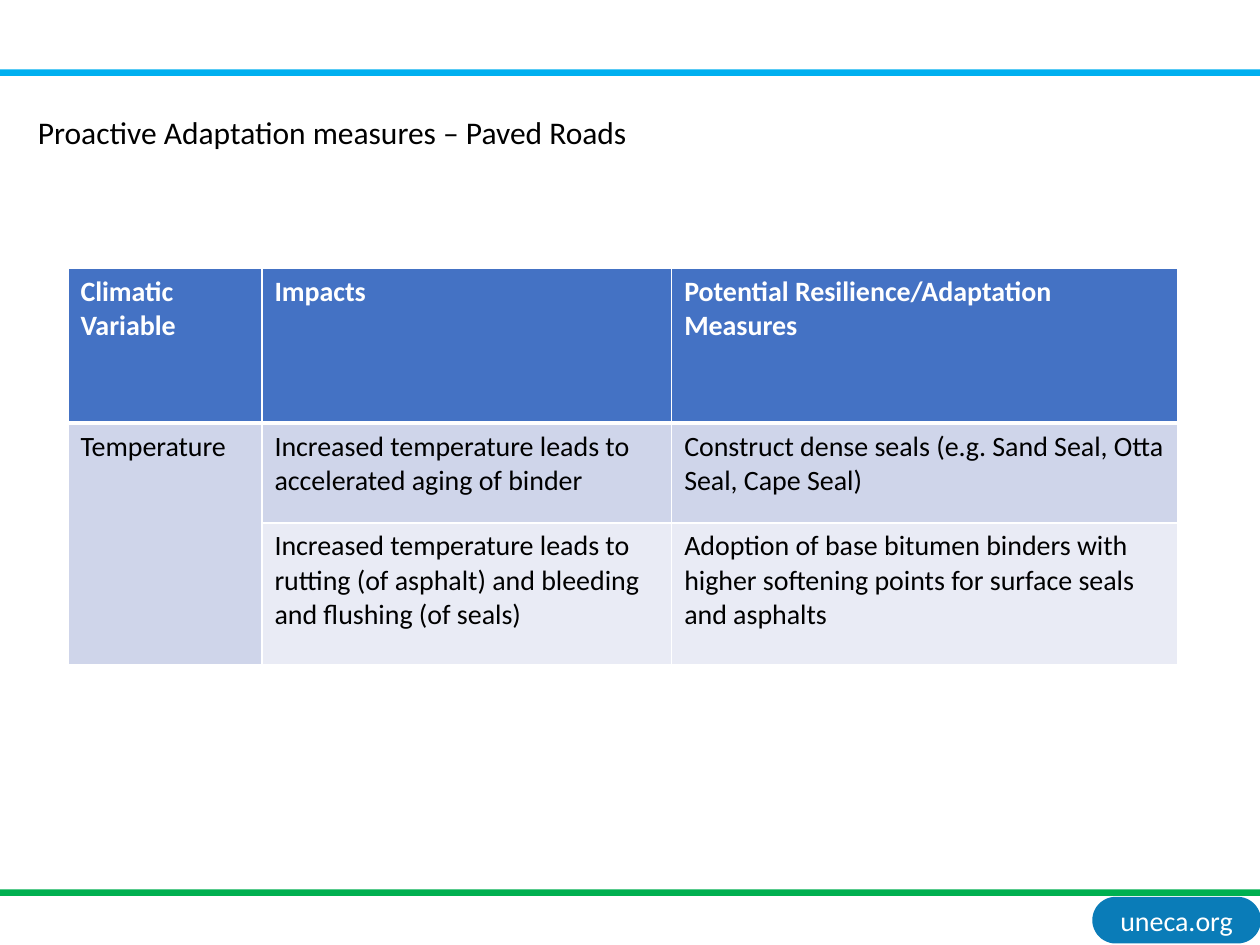
"""Build the slide on proactive adaptation measures for paved roads."""
import dataclasses

import lxml.etree
import pptx
import pptx.dml.color
import pptx.enum.shapes
import pptx.enum.text
import pptx.oxml.ns
import pptx.util

Cm = pptx.util.Cm
Pt = pptx.util.Pt
SHAPES = pptx.enum.shapes.MSO_SHAPE
ALIGN = pptx.enum.text.PP_ALIGN
ANCHOR = pptx.enum.text.MSO_ANCHOR

COLORS = {
    "black": "000000",
    "white": "FFFFFF",
    "sky": "00B0F0",
    "green": "00B050",
    "badge": "0A7CB8",
    "header": "4472C4",
    "band_dark": "CFD5EA",
    "band_light": "E9EBF5",
}
FONT = "Calibri"


@dataclasses.dataclass
class Box:
    left: float
    top: float
    width: float
    height: float

    def lengths(self) -> list:
        return [Cm(v) for v in (self.left, self.top, self.width, self.height)]


@dataclasses.dataclass
class Row:
    height: float
    fill: str
    texts: tuple


BARS = [(Box(0, 1.4, 25.4, 0.13), "sky"), (Box(0, 17.93, 25.4, 0.13), "green")]
BADGE = Box(22.02, 18.08, 3.4, 0.94)
TITLE = Box(0.51, 2.16, 12.9, 1.02)
TABLE_LEFT, TABLE_TOP = 1.37, 5.41
COLUMN_WIDTHS = [3.91, 8.26, 10.21]
ROWS = [
    Row(3.12, "header", ("Climatic Variable", "Impacts", "Potential Resilience/Adaptation Measures")),
    Row(2.01, "band_dark", (
        "Temperature",
        "Increased temperature leads to accelerated aging of binder",
        "Construct dense seals (e.g. Sand Seal, Otta Seal, Cape Seal)",
    )),
    Row(2.87, "band_light", (
        "",
        "Increased temperature leads to rutting (of asphalt) and bleeding and flushing (of seals)",
        "Adoption of base bitumen binders with higher softening points for surface seals and asphalts",
    )),
]


def rgb(name: str) -> pptx.dml.color.RGBColor:
    return pptx.dml.color.RGBColor.from_string(COLORS[name])


def add_run(p, text: str, size: float, color: str, bold: bool = False) -> None:
    r = p.add_run()
    r.text = text
    r.font.name = FONT
    r.font.size = Pt(size)
    r.font.bold = bold
    r.font.color.rgb = rgb(color)


def add_filled(slide, kind, box: Box, color: str):
    sp = slide.shapes.add_shape(kind, *box.lengths())
    sp.shadow.inherit = False
    sp.fill.solid()
    sp.fill.fore_color.rgb = rgb(color)
    sp.line.fill.background()
    return sp


def add_badge(slide) -> None:
    sp = add_filled(slide, SHAPES.ROUNDED_RECTANGLE, BADGE, "badge")
    sp.adjustments[0] = 0.5
    tf = sp.text_frame
    tf.margin_left = tf.margin_right = tf.margin_top = tf.margin_bottom = Cm(0.13)
    tf.vertical_anchor = ANCHOR.MIDDLE
    tf.word_wrap = False
    p = tf.paragraphs[0]
    p.alignment = ALIGN.CENTER
    add_run(p, "uneca.org", 16, "white")


def set_border(cell, side: str, width: float) -> None:
    qn = pptx.oxml.ns.qn
    ln = lxml.etree.SubElement(cell._tc.get_or_add_tcPr(), qn(f"a:ln{side}"), w=str(Pt(width)))
    fill = lxml.etree.SubElement(ln, qn("a:solidFill"))
    lxml.etree.SubElement(fill, qn("a:srgbClr"), val=COLORS["white"])


def add_measures_table(slide) -> None:
    box = Box(TABLE_LEFT, TABLE_TOP, sum(COLUMN_WIDTHS), sum(row.height for row in ROWS))
    table = slide.shapes.add_table(len(ROWS), len(COLUMN_WIDTHS), *box.lengths()).table
    for column, width in zip(table.columns, COLUMN_WIDTHS):
        column.width = Cm(width)
    table.cell(1, 0).merge(table.cell(2, 0))
    for i, row in enumerate(ROWS):
        table.rows[i].height = Cm(row.height)
        is_header = i == 0
        for j, text in enumerate(row.texts):
            cell = table.cell(i, j)
            widths = {"L": 1, "R": 1, "T": 3 if i == 1 else 1, "B": 3 if is_header else 1}
            for side, width in widths.items():
                set_border(cell, side, width)
            cell.fill.solid()
            cell.fill.fore_color.rgb = rgb(row.fill)
            if text:
                color = "white" if is_header else "black"
                add_run(cell.text_frame.paragraphs[0], text, 16, color, is_header)


def set_title(slide) -> None:
    sp = slide.shapes.title
    sp.left, sp.top, sp.width, sp.height = TITLE.lengths()
    tf = sp.text_frame
    tf.word_wrap = False
    tf.auto_size = pptx.enum.text.MSO_AUTO_SIZE.NONE
    tf.vertical_anchor = ANCHOR.TOP
    p = tf.paragraphs[0]
    p.alignment = ALIGN.LEFT
    p.line_spacing = 1.0
    p.space_before = Pt(0)
    add_run(p, "Proactive Adaptation measures – Paved Roads", 18, "black")


def main() -> None:
    prs = pptx.Presentation()
    prs.slide_width, prs.slide_height = Cm(25.4), Cm(19.05)
    slide = prs.slides.add_slide(prs.slide_layouts.get_by_name("Title Only"))
    add_badge(slide)
    for box, color in BARS:
        add_filled(slide, SHAPES.RECTANGLE, box, color)
    add_measures_table(slide)
    set_title(slide)
    prs.save("out.pptx")


if __name__ == "__main__":
    main()
